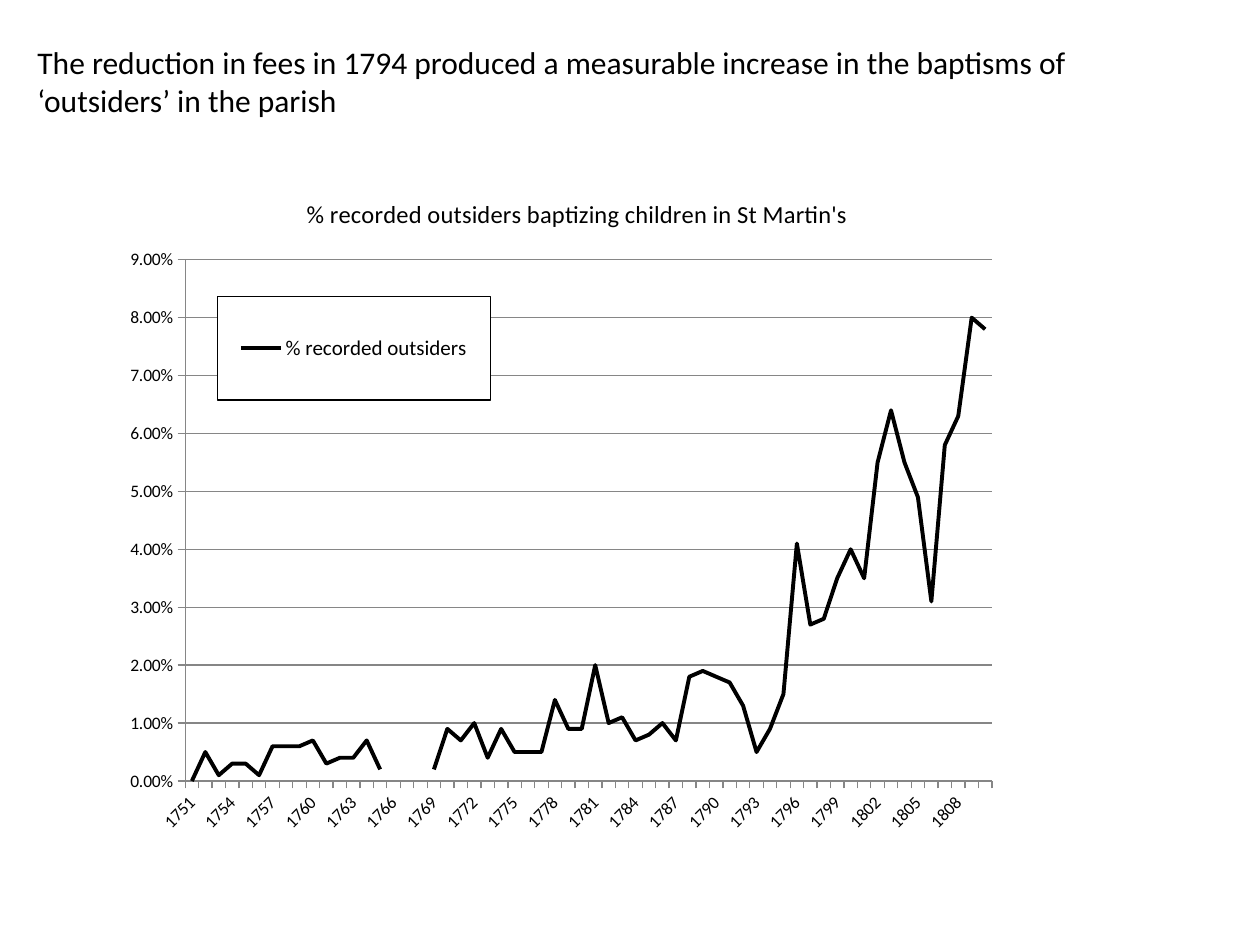
from lxml.etree import SubElement
from pptx import Presentation
from pptx.chart.data import CategoryChartData
from pptx.dml.color import RGBColor
from pptx.enum.chart import XL_CHART_TYPE as ChartType, XL_LEGEND_POSITION as LegendPos
from pptx.enum.chart import XL_TICK_MARK as Tick
from pptx.enum.text import MSO_ANCHOR as Anchor, MSO_AUTO_SIZE as AutoSize, PP_ALIGN as Align
from pptx.oxml import parse_xml
from pptx.oxml.ns import nsdecls, qn
from pptx.util import Cm, Pt

YEARS = range(1751, 1811)
OUTSIDERS_PER_1000 = [
    0, 5, 1, 3, 3, 1, 6, 6, 6, 7,
    3, 4, 4, 7, 2, None, None, None, 2, 9,
    7, 10, 4, 9, 5, 5, 5, 14, 9, 9,
    20, 10, 11, 7, 8, 10, 7, 18, 19, 18,
    17, 13, 5, 9, 15, 41, 27, 28, 35, 40,
    35, 55, 64, 55, 49, 31, 58, 63, 80, 78,
]


def color(value):
    return RGBColor.from_string(value)


def place(element, index, **box):
    old = element.find(qn("c:layout"))
    if old is not None:
        element.remove(old)
    layout = parse_xml(f"<c:layout {nsdecls('c')}/>")
    manual = SubElement(layout, qn("c:manualLayout"))
    if "w" in box and index == 0:
        SubElement(manual, qn("c:layoutTarget"), val="inner")
    for axis in "xy":
        SubElement(manual, qn(f"c:{axis}Mode"), val="edge")
    for name, value in box.items():
        SubElement(manual, qn(f"c:{name}"), val=str(value))
    element.insert(index, layout)


class Deck:
    font = "Calibri"
    ink = "000000"
    grid = "868686"

    def __init__(self, width, height):
        self.prs = Presentation()
        self.prs.slide_width, self.prs.slide_height = width, height
        self.s = None

    def add_slide(self):
        self.s = self.prs.slides.add_slide(self.prs.slide_layouts[5])

    def style(self, font, size):
        font.name, font.size, font.bold = self.font, Pt(size), False
        font.color.rgb = color(self.ink)

    def line(self, line, width, value):
        line.width = Pt(width)
        line.color.rgb = color(value)

    def title(self, text, left, top, width, height):
        sp = self.s.shapes.title
        sp.left, sp.top, sp.width, sp.height = left, top, width, height
        tf = sp.text_frame
        tf.text = text
        tf.word_wrap, tf.auto_size = True, AutoSize.SHAPE_TO_FIT_TEXT
        tf.vertical_anchor = Anchor.TOP
        p = tf.paragraphs[0]
        p.alignment = Align.LEFT
        self.style(p.runs[0].font, 18)

    def line_chart(self, title, series, years, values, *box):
        data = CategoryChartData(number_format="0.00%")
        data.categories = [str(year) for year in years]
        data.add_series(series, values)
        chart = self.s.shapes.add_chart(ChartType.LINE, *box, data).chart
        self.style(chart.font, 10)
        plot = chart.plots[0]
        plot.vary_by_categories = False
        curve = plot.series[0]
        curve.smooth = False
        self.line(curve.format.line, 2.25, self.ink)
        self.chart_title(chart, title)
        self.legend(chart)
        self.axes(chart)
        plot_area = chart._chartSpace.chart.plotArea
        place(plot_area, 0, x=0.086, y=0.137, w=0.856, h=0.755)

    def chart_title(self, chart, text):
        chart.has_title = True
        tf = chart.chart_title.text_frame
        tf.text = text
        self.style(tf.paragraphs[0].runs[0].font, 14)
        place(chart.chart_title._element, 1, x=0.21, y=0.04)

    def legend(self, chart):
        chart.has_legend = True
        legend = chart.legend
        legend.position = LegendPos.RIGHT
        legend.include_in_layout = False
        self.style(legend.font, 12)
        place(legend._element, 1, x=0.12, y=0.19, w=0.29, h=0.15)
        frame = parse_xml(
            f"<c:spPr {nsdecls('c', 'a')}>"
            '<a:solidFill><a:srgbClr val="FFFFFF"/></a:solidFill>'
            f'<a:ln w="{Pt(0.75)}"><a:solidFill><a:srgbClr val="{self.ink}"/></a:solidFill></a:ln>'
            "</c:spPr>"
        )
        legend._element.find(qn("c:txPr")).addprevious(frame)

    def axes(self, chart):
        for axis in (chart.category_axis, chart.value_axis):
            axis.major_tick_mark, axis.minor_tick_mark = Tick.OUTSIDE, Tick.NONE
            self.style(axis.tick_labels.font, 10)
            self.line(axis.format.line, 0.75, self.grid)
        years, share = chart.category_axis, chart.value_axis
        years.has_major_gridlines = False
        years._element.find(qn("c:txPr")).find(qn("a:bodyPr")).set("rot", "-2700000")
        skip = parse_xml(f'<c:tickLblSkip {nsdecls("c")} val="3"/>')
        years._element.find(qn("c:noMultiLvlLbl")).addprevious(skip)
        share.has_major_gridlines = True
        self.line(share.major_gridlines.format.line, 0.75, self.grid)
        share.minimum_scale, share.maximum_scale, share.major_unit = 0, 0.09, 0.01
        share.tick_labels.number_format = "0.00%"
        share.tick_labels.number_format_is_linked = False


def main():
    deck = Deck(Cm(25.4), Cm(19.05))
    deck.add_slide()
    deck.title(
        "The reduction in fees in 1794 produced a measurable increase in the baptisms of "
        "‘outsiders’ in the parish",
        Cm(0.5), Cm(0.74), Cm(22.8), Cm(1.8),
    )
    deck.line_chart(
        "% recorded outsiders baptizing children in St Martin's",
        "% recorded outsiders",
        YEARS,
        [None if n is None else n / 1000 for n in OUTSIDERS_PER_1000],
        Cm(2.1), Cm(3.33), Cm(19), Cm(13.92),
    )
    deck.prs.save("out.pptx")


if __name__ == "__main__":
    main()
